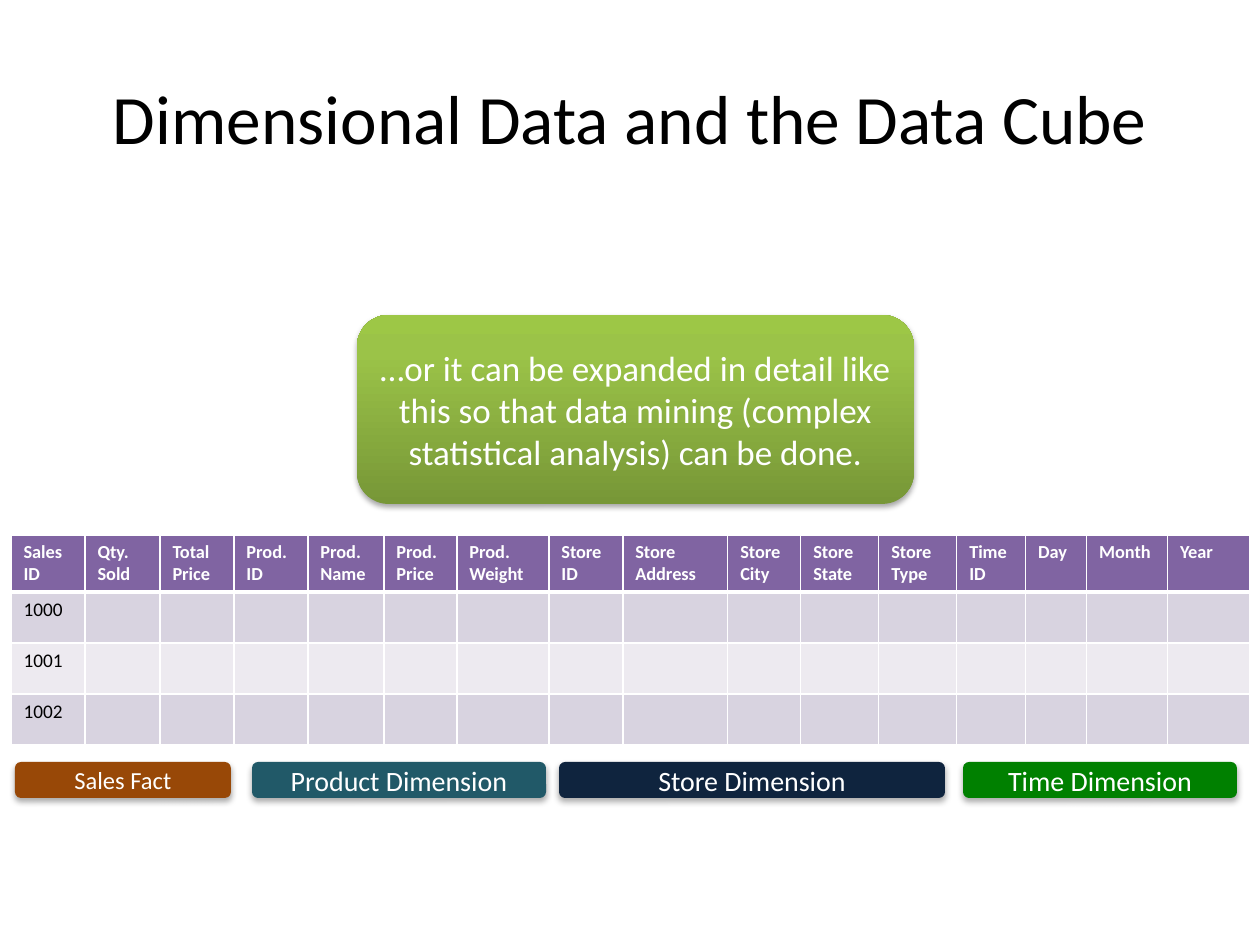
from dataclasses import dataclass

import pptx
import pptx.dml.color
import pptx.enum.shapes
import pptx.enum.text
import pptx.oxml
import pptx.oxml.ns
import pptx.util
from lxml import etree

RGBColor = pptx.dml.color.RGBColor
WHITE = RGBColor(0xFF, 0xFF, 0xFF)
BLACK = RGBColor(0, 0, 0)
PURPLE = RGBColor(0x80, 0x64, 0xA2)
LILAC = RGBColor(0xD8, 0xD3, 0xE0)
PALE_LILAC = RGBColor(0xED, 0xEA, 0xF0)
BROWN = RGBColor(0x98, 0x48, 0x07)
TEAL = RGBColor(0x21, 0x59, 0x68)
NAVY = RGBColor(0x0F, 0x24, 0x3E)
GREEN = RGBColor(0, 0x80, 0)
LIME_STOPS = [
    (0, RGBColor(0x77, 0x97, 0x37)),
    (80, RGBColor(0x9B, 0xC3, 0x48)),
    (100, RGBColor(0x9D, 0xC7, 0x46)),
]

PX_PER_INCH = 126
FONT = "Calibri"
MIDDLE = pptx.enum.text.MSO_ANCHOR.MIDDLE
CENTER = pptx.enum.text.PP_ALIGN.CENTER


@dataclass
class Column:
    heading: str
    width: int


@dataclass
class Label:
    text: str
    left: int
    width: int
    color: RGBColor
    size: int = 16


@dataclass
class Shadow:
    opacity: int
    blur: float
    distance: float


# A vertical tab in a heading is a line break
COLUMNS = [
    Column("Sales\vID", 74),
    Column("Qty. Sold", 75),
    Column("Total Price", 74),
    Column("Prod.\vID", 74),
    Column("Prod.\vName", 76),
    Column("Prod.\vPrice", 73),
    Column("Prod.\vWeight", 92),
    Column("Store\vID", 74),
    Column("Store\vAddress", 105),
    Column("Store\vCity", 73),
    Column("Store\vState", 78),
    Column("Store\vType", 78),
    Column("Time\vID", 69),
    Column("Day", 61),
    Column("Month", 81),
    Column("Year", 82),
]
SALES_IDS = ["1000", "1001", "1002"]
HEADER_HEIGHT, ROW_HEIGHT = 57, 51

LABELS = [
    Label("Sales Fact", 15, 216, BROWN, 14),
    Label("Product Dimension", 252, 294, TEAL),
    Label("Store Dimension", 559, 386, NAVY),
    Label("Time Dimension", 963, 274, GREEN),
]
LABEL_SHADOW = Shadow(32, 3.5, 2.2)
CALLOUT_SHADOW = Shadow(35, 3.1, 1.8)


def px(length: int) -> int:
    return round(length * pptx.util.Inches(1) / PX_PER_INCH)


def write_text(frame, text: str, size: float, color: RGBColor, bold=False, align=None) -> None:
    para = frame.paragraphs[0]
    para.text = text
    para.alignment = align
    for span in para.runs:
        formats = {"name": FONT, "size": pptx.util.Pt(size), "bold": bold}
        for name, value in formats.items():
            setattr(span.font, name, value)
        span.font.color.rgb = color


def center_text(frame, text: str, size: float, color: RGBColor) -> None:
    frame.word_wrap = True
    frame.vertical_anchor = MIDDLE
    write_text(frame, text, size, color, align=CENTER)


def add_color(parent, color: RGBColor):
    return etree.SubElement(parent, pptx.oxml.ns.qn("a:srgbClr"), val=str(color))


def add_rounded_box(page, left: int, top: int, width: int, height: int,
                    text: str, size: int, shadow: Shadow):
    box = page.shapes.add_shape(
        pptx.enum.shapes.MSO_SHAPE.ROUNDED_RECTANGLE,
        px(left), px(top), px(width), px(height))
    box.line.fill.background()
    box.shadow.inherit = False
    effects = box.element.spPr.find(pptx.oxml.ns.qn("a:effectLst"))
    outer = etree.SubElement(
        effects, pptx.oxml.ns.qn("a:outerShdw"),
        blurRad=str(pptx.util.Pt(shadow.blur)), dist=str(pptx.util.Pt(shadow.distance)),
        dir="5400000", rotWithShape="0")
    etree.SubElement(add_color(outer, BLACK), pptx.oxml.ns.qn("a:alpha"),
                     val=str(shadow.opacity * 1000))
    center_text(box.text_frame, text, size, WHITE)
    return box


def fill_upward_gradient(box, stops) -> None:
    box.fill.gradient()
    box.fill.gradient_angle = 90
    stop_list = next(box.element.spPr.iter(pptx.oxml.ns.qn("a:gsLst")))
    for old_stop in list(stop_list):
        stop_list.remove(old_stop)
    for position, color in stops:
        stop = etree.SubElement(stop_list, pptx.oxml.ns.qn("a:gs"), pos=str(position * 1000))
        add_color(stop, color)


def style_cell(cell, fill: RGBColor, top: int, bottom: int) -> None:
    # Borders come before the fill in the cell properties
    properties = cell._tc.get_or_add_tcPr()
    for side, width in {"L": 1, "R": 1, "T": top, "B": bottom}.items():
        line = etree.SubElement(properties, pptx.oxml.ns.qn(f"a:ln{side}"),
                                w=str(pptx.util.Pt(width)))
        add_color(etree.SubElement(line, pptx.oxml.ns.qn("a:solidFill")), WHITE)
    cell.fill.solid()
    cell.fill.fore_color.rgb = fill


def add_sales_table(page, left: int, top: int) -> None:
    width = sum(column.width for column in COLUMNS)
    height = HEADER_HEIGHT + ROW_HEIGHT * len(SALES_IDS)
    table = page.shapes.add_table(
        len(SALES_IDS) + 1, len(COLUMNS), px(left), px(top), px(width), px(height)).table
    for index, row in enumerate(table.rows):
        row.height = px(ROW_HEIGHT if index else HEADER_HEIGHT)
    for index, column in enumerate(COLUMNS):
        table.columns[index].width = px(column.width)
        header = table.cell(0, index)
        style_cell(header, PURPLE, 1, 3)
        write_text(header.text_frame, column.heading, 10.5, WHITE, bold=True)
        for row in range(1, len(SALES_IDS) + 1):
            style_cell(table.cell(row, index), LILAC if row % 2 else PALE_LILAC,
                       3 if row == 1 else 1, 1)
    for row, sales_id in enumerate(SALES_IDS, start=1):
        write_text(table.cell(row, 0).text_frame, sales_id, 11, BLACK)


def main() -> None:
    deck = pptx.Presentation()
    deck.slide_width, deck.slide_height = px(1260), px(945)
    page = deck.slides.add_slide(deck.slide_layouts[6])

    # Title
    title = page.shapes.add_textbox(px(63), px(38), px(1134), px(157))
    center_text(title.text_frame, "Dimensional Data and the Data Cube", 39.6, BLACK)

    # Expanded sales table
    add_sales_table(page, 11, 535)

    # Labels under the column groups
    for label in LABELS:
        box = add_rounded_box(page, label.left, 762, label.width, 36,
                              label.text, label.size, LABEL_SHADOW)
        box.fill.solid()
        box.fill.fore_color.rgb = label.color

    # Callout
    callout = add_rounded_box(
        page, 357, 315, 557, 189,
        "…or it can be expanded in detail like this so that data mining "
        "(complex statistical analysis) can be done.", 20, CALLOUT_SHADOW)
    fill_upward_gradient(callout, LIME_STOPS)

    deck.save("out.pptx")


if __name__ == "__main__":
    main()
